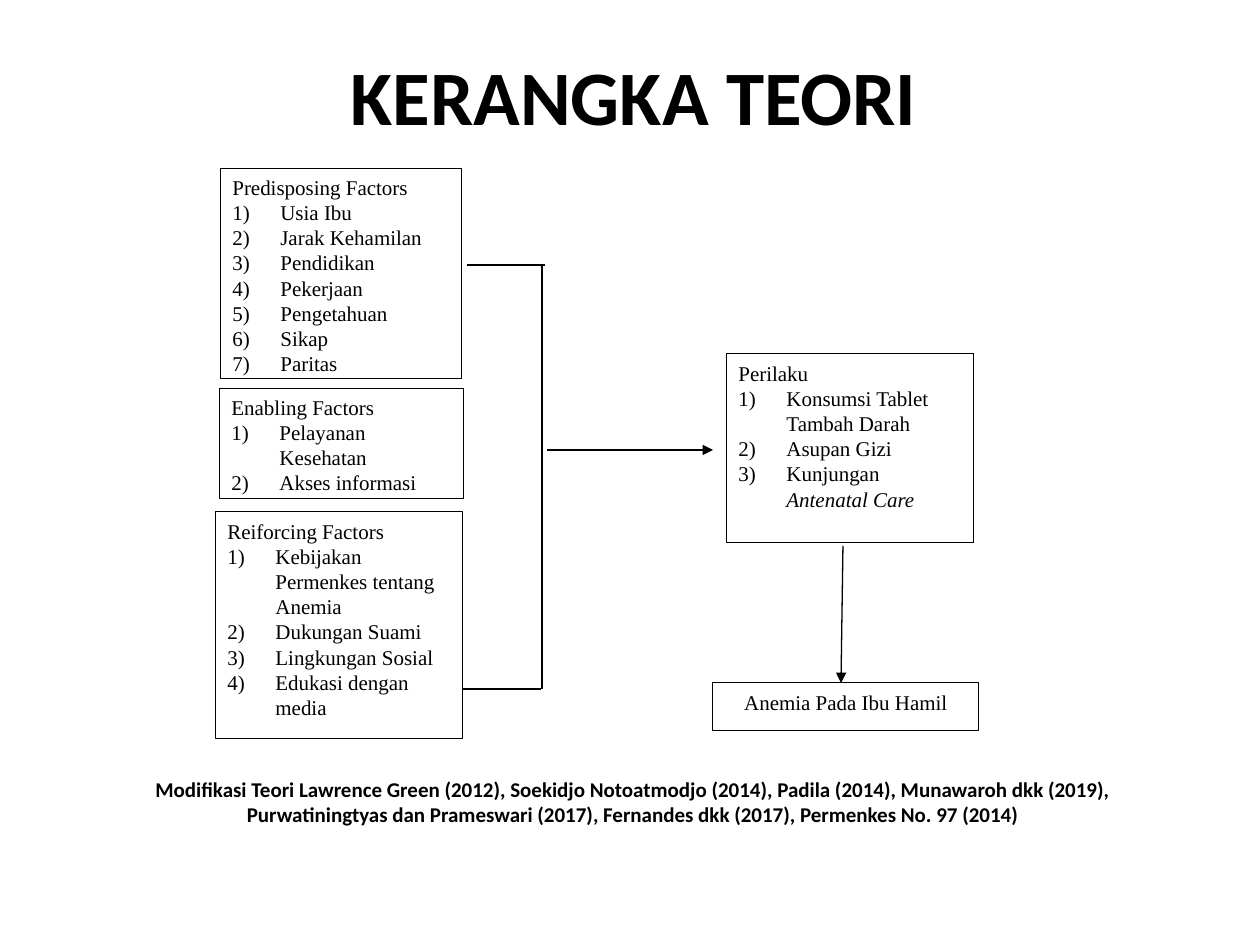
from pptx import Presentation
from pptx import util as u
from pptx.dml.color import RGBColor
from pptx.enum import shapes, text
from pptx.oxml.ns import qn
from lxml import etree

PX_PER_INCH = 126
BLACK = RGBColor(0x00, 0x00, 0x00)
WHITE = RGBColor(0xFF, 0xFF, 0xFF)
SERIF, SANS = "Times New Roman", "Calibri"
LEFT, CENTER, JUSTIFY = (text.PP_ALIGN.LEFT, text.PP_ALIGN.CENTER,
                         text.PP_ALIGN.JUSTIFY)
INDENT = 48

# Each factor box: (left, top, width, height), alignment, heading, items
FACTORS = [
    ((5, 0, 242, 210), JUSTIFY, "Predisposing Factors",
     ["Usia Ibu", "Jarak Kehamilan", "Pendidikan", "Pekerjaan",
      "Pengetahuan", "Sikap", "Paritas"]),
    ((4, 220, 244, 111), LEFT, "Enabling Factors",
     ["Pelayanan Kesehatan", "Akses informasi"]),
    ((0, 344, 248, 227), LEFT, "Reiforcing Factors",
     ["Kebijakan Permenkes tentang Anemia", "Dukungan Suami",
      "Lingkungan Sosial", "Edukasi dengan media"]),
]
BEHAVIOURS = ["Konsumsi Tablet Tambah Darah", "Asupan Gizi",
              ("Kunjungan ", "Antenatal Care")]
SOURCES = ("Modifikasi Teori Lawrence Green (2012), Soekidjo Notoatmodjo (2014), "
           "Padila (2014), Munawaroh dkk (2019), Purwatiningtyas dan Prameswari "
           "(2017), Fernandes dkk (2017), Permenkes No. 97 (2014)")


def px(n):
    return u.Emu(round(n * 914400 / PX_PER_INCH))


def add_run(p, words, font=SERIF, size=12, bold=False, italic=False):
    r = p.add_run()
    r.text = words
    f = r.font
    f.name, f.size, f.bold, f.italic = font, u.Pt(size), bold, italic
    f.color.rgb = BLACK


def number(p):
    """Number a paragraph 1), 2), ... with a hanging indent."""
    pPr = p._p.get_or_add_pPr()
    pPr.set("marL", str(px(INDENT)))
    pPr.set("indent", str(-px(INDENT)))
    bullet = etree.SubElement(pPr, qn("a:buAutoNum"))
    bullet.set("type", "arabicParenR")


def add_caption(s, box, words, size, anchor):
    sp = s.shapes.add_textbox(*map(px, box))
    tf = sp.text_frame
    tf.word_wrap = True
    tf.vertical_anchor = anchor
    p = tf.paragraphs[0]
    p.alignment = CENTER
    add_run(p, words, SANS, size, bold=True)


def add_box(s, box, align, heading, items=()):
    """Outlined box; an item given as a pair has its second part in italics."""
    sp = s.shapes.add_shape(shapes.MSO_SHAPE.RECTANGLE, *map(px, box))
    sp.shadow.inherit = False
    sp.fill.solid()
    sp.fill.fore_color.rgb = WHITE
    sp.line.color.rgb = BLACK
    sp.line.width = u.Pt(0.5)
    tf = sp.text_frame
    tf.word_wrap = True
    tf.vertical_anchor = text.MSO_ANCHOR.TOP
    p = tf.paragraphs[0]
    p.alignment = align
    add_run(p, heading)
    for item in items:
        p = tf.add_paragraph()
        p.alignment = align
        number(p)
        parts = (item,) if isinstance(item, str) else item
        for i, part in enumerate(parts):
            add_run(p, part, italic=i > 0)


def add_line(s, x1, y1, x2, y2, arrow=False):
    c = s.shapes.add_connector(shapes.MSO_CONNECTOR.STRAIGHT,
                               *map(px, (x1, y1, x2, y2)))
    c.line.color.rgb = BLACK
    c.line.width = u.Pt(0.75)
    if arrow:
        tail = etree.SubElement(c.line._get_or_add_ln(), qn("a:tailEnd"))
        tail.set("type", "triangle")
    etree.SubElement(c._element.spPr, qn("a:effectLst"))


def add_factors(s, x, y):
    for (left, top, w, h), align, heading, items in FACTORS:
        add_box(s, (x + left, y + top, w, h), align, heading, items)


def add_bracket(s, x, y, w, h):
    """Bracket joining the factors, with an arrow towards the behaviour."""
    spine = x + w
    add_line(s, x, y + h, spine - 1, y + h)
    add_line(s, spine, y + h, spine, y)
    add_line(s, x + 5, y + 1, spine + 3, y + 1)
    add_line(s, spine + 5, y + 186, spine + 171, y + 186, arrow=True)


def add_outcome(s, x, y):
    add_line(s, x + 130, y + 192, x + 128, y + 329, arrow=True)
    add_box(s, (x + 13, y, 248, 189), LEFT, "Perilaku", BEHAVIOURS)
    add_box(s, (x, y + 329, 266, 48), CENTER, "Anemia Pada Ibu Hamil")


def main():
    prs = Presentation()
    prs.slide_width, prs.slide_height = px(1260), px(945)
    s = prs.slides.add_slide(prs.slide_layouts[6])
    add_caption(s, (63, 38, 1142, 113), "KERANGKA TEORI", 44,
                text.MSO_ANCHOR.MIDDLE)
    add_factors(s, 215, 168)
    add_bracket(s, 462, 264, 80, 425)
    add_outcome(s, 713, 354)
    add_caption(s, (142, 770, 982, 63), SOURCES, 12, text.MSO_ANCHOR.TOP)
    prs.save("out.pptx")


if __name__ == "__main__":
    main()
